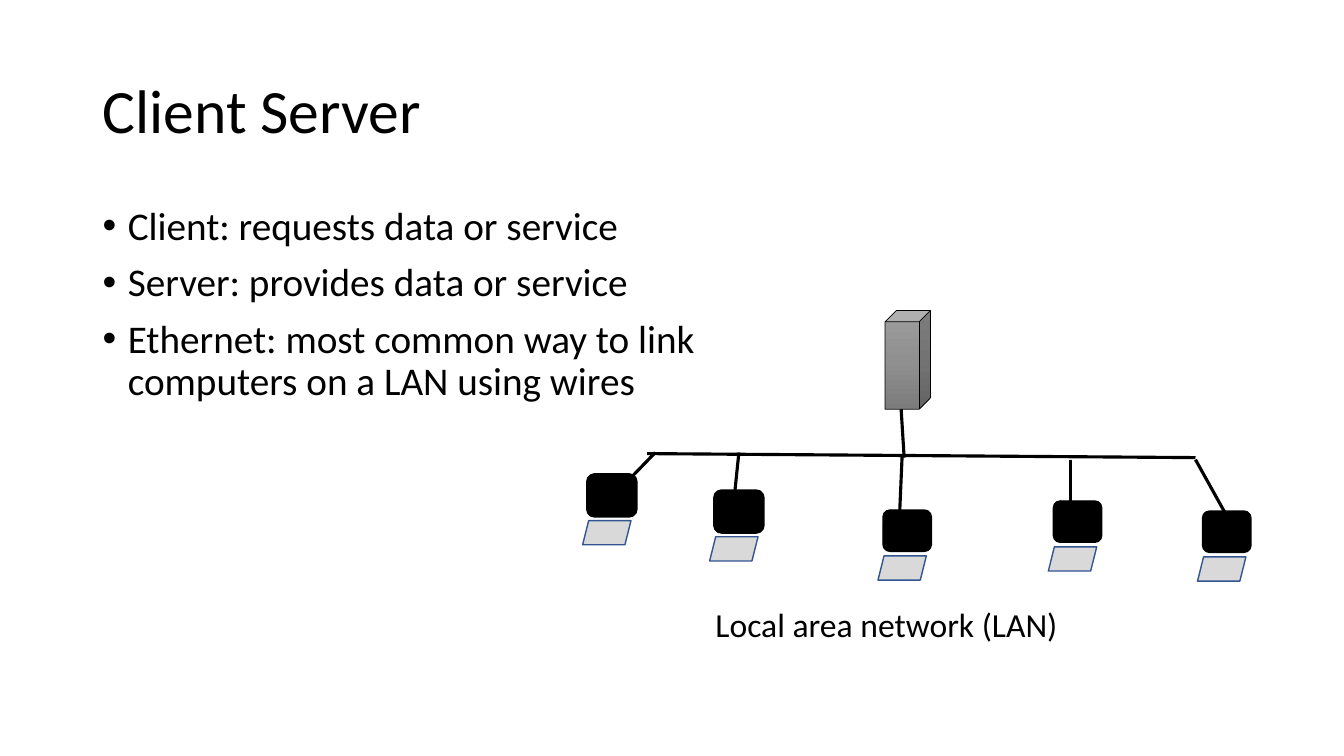
from copy import deepcopy

from lxml.etree import SubElement
from pptx import Presentation
from pptx.dml.color import RGBColor
from pptx.enum.shapes import MSO_CONNECTOR, MSO_SHAPE
from pptx.enum.text import MSO_ANCHOR
from pptx.oxml.ns import qn
from pptx.util import Inches, Pt

BLACK = RGBColor(0x00, 0x00, 0x00)
KEYBOARD_GRAY = RGBColor(0xD9, 0xD9, 0xD9)
KEYBOARD_LINE = RGBColor(0x32, 0x54, 0x91)
SERVER_GRAYS = [(0, RGBColor(0x9D, 0x9D, 0x9D)),
                (0.5, RGBColor(0x90, 0x90, 0x90)),
                (1, RGBColor(0x7C, 0x7C, 0x7C))]
FONT = "Calibri"

TITLE = "Client Server"
BULLETS = [
    "Client: requests data or service",
    "Server: provides data or service",
    "Ethernet: most common way to link\ncomputers on a LAN using wires",
]
CAPTION = "Local area network (LAN)"

# Inches: monitor corner, monitor outline (pt), cable from the bus, cable to the monitor
CLIENTS = [
    ((5.83, 4.71), 2.25, (6.5, 4.49), (6.2, 4.8)),
    ((7.09, 4.87), 2.25, (7.33, 4.49), (7.29, 4.88)),
    ((8.76, 5.06), 1, (8.95, 4.52), (8.92, 5.21)),
    ((10.45, 4.97), 1, (10.62, 4.56), (10.62, 5.15)),
    ((11.93, 5.07), 1, (11.86, 4.56), (12.16, 5.1)),
]
MONITOR = (0.48, 0.41)
KEYBOARD = (0.48, 0.24)
KEYBOARD_SHIFT = (-0.05, 0.455)
SERVER = (8.78, 3.08, 0.45, 0.98)
SERVER_CABLE = ((8.97, 4.54), (8.94, 4.06))
BUS = ((11.86, 4.54), (6.42, 4.5))

prs = Presentation()
prs.slide_width, prs.slide_height = Inches(13.333), Inches(7.5)
slide = prs.slides.add_slide(prs.slide_layouts[6])


def add_text(box, lines, size, anchor=MSO_ANCHOR.TOP, wrap=True,
             spacing=None, before=0, bullet=None):
    tf = slide.shapes.add_textbox(*map(Inches, box)).text_frame
    tf.word_wrap = wrap
    tf.vertical_anchor = anchor
    for i, line in enumerate(lines):
        p = tf.add_paragraph() if i else tf.paragraphs[0]
        p.text = line
        p.line_spacing = spacing
        p.space_before = Pt(before)
        for r in p.runs:
            r.font.name, r.font.size = FONT, Pt(size)
            r.font.color.rgb = BLACK
        if bullet:
            pPr = p._p.get_or_add_pPr()
            pPr.set("marL", str(Inches(0.25)))
            pPr.set("indent", str(-Inches(0.25)))
            SubElement(pPr, qn("a:buFont"), typeface="Arial")
            SubElement(pPr, qn("a:buChar"), char=bullet)


def add_part(kind, corner, size, line, width, fill=None):
    sp = slide.shapes.add_shape(kind, *map(Inches, (*corner, *size)))
    sp.shadow.inherit = False
    sp.line.color.rgb, sp.line.width = line, Pt(width)
    if fill is not None:
        sp.fill.solid()
        sp.fill.fore_color.rgb = fill
    return sp


def add_cable(start, end):
    cable = slide.shapes.add_connector(MSO_CONNECTOR.STRAIGHT,
                                       *map(Inches, (*start, *end)))
    cable.line.color.rgb, cable.line.width = BLACK, Pt(2.25)
    SubElement(cable._element.spPr, qn("a:effectLst"))


def add_server():
    server = add_part(MSO_SHAPE.CUBE, SERVER[:2], SERVER[2:], BLACK, 0.5)
    server.fill.gradient()
    server.fill.gradient_angle = 270
    stops = server._element.spPr.find(".//" + qn("a:gsLst"))
    stops.append(deepcopy(stops[-1]))
    for stop, (position, gray) in zip(server.fill.gradient_stops, SERVER_GRAYS):
        stop.position, stop.color.rgb = position, gray


add_text((0.92, 0.4, 11.5, 1.45), [TITLE], 44, anchor=MSO_ANCHOR.MIDDLE, spacing=0.9)
add_text((0.92, 2, 11.5, 4.76), BULLETS, 28, spacing=0.9, before=10, bullet="•")
add_server()
for corner, outline, _, _ in CLIENTS:
    add_part(MSO_SHAPE.ROUNDED_RECTANGLE, corner, MONITOR, BLACK, outline, BLACK)
    below = [c + d for c, d in zip(corner, KEYBOARD_SHIFT)]
    add_part(MSO_SHAPE.PARALLELOGRAM, below, KEYBOARD, KEYBOARD_LINE, 1, KEYBOARD_GRAY)
for ends in [SERVER_CABLE, BUS] + [client[2:] for client in CLIENTS]:
    add_cable(*ends)
add_text((7, 5.94, 3.63, 0.5), [CAPTION], 24, wrap=False)

prs.save("out.pptx")
